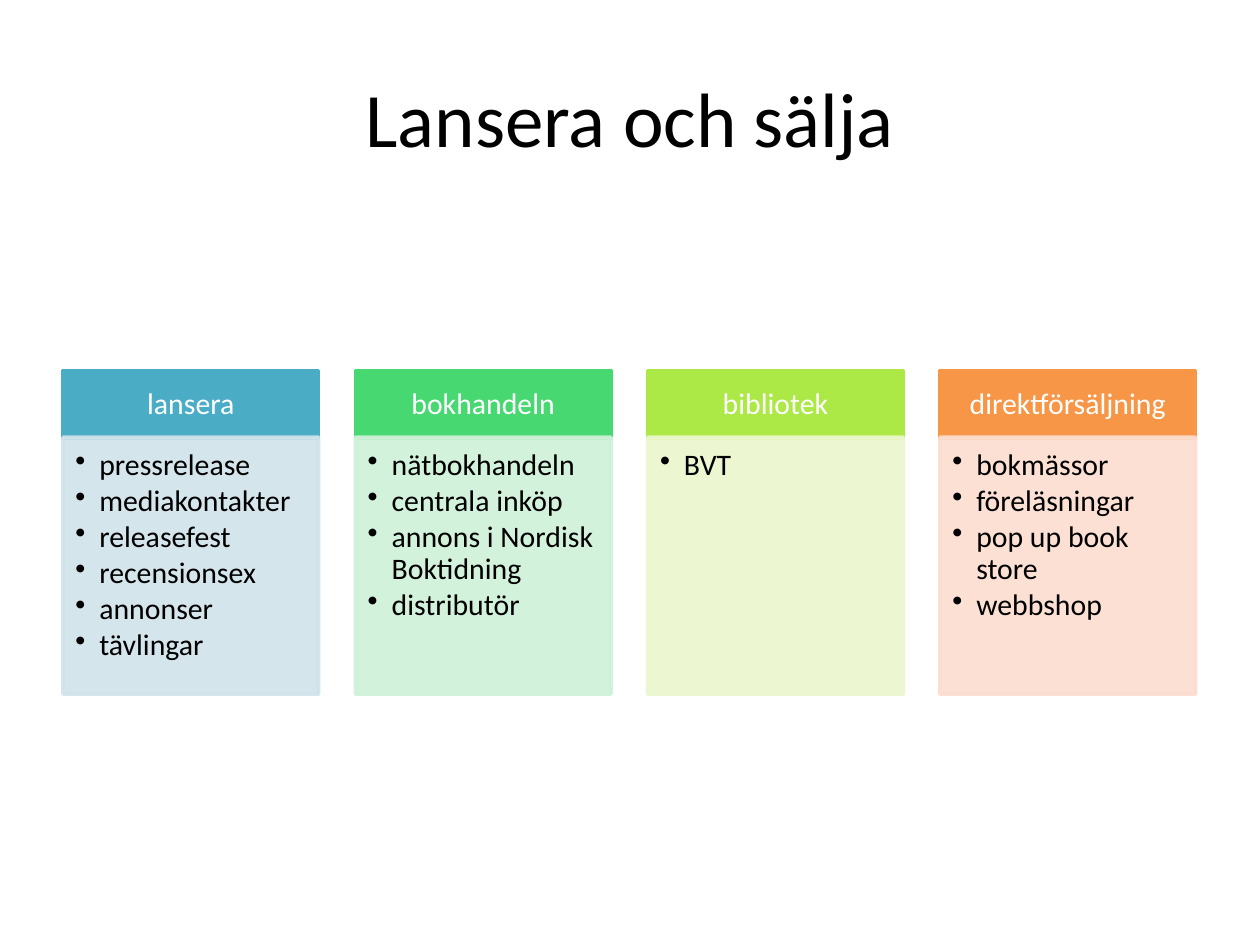
from dataclasses import dataclass

from pptx import Presentation
from pptx import util as u
from pptx.dml.color import RGBColor
from pptx.enum import shapes, text
from pptx.oxml.ns import qn
from lxml import etree


@dataclass(frozen=True)
class Theme:
    font: str = "Calibri"
    ink: str = "000000"
    paper: str = "FFFFFF"
    title_size: float = 44
    body_size: float = 17
    line_width: float = 2
    body_alpha: int = 90


# Heading, heading colour, body colour, bullets
COLUMNS = [
    ("lansera", "4BACC6", "D0E3EA",
     ["pressrelease", "mediakontakter", "releasefest", "recensionsex",
      "annonser", "tävlingar"]),
    ("bokhandeln", "47D872", "CFF1D9",
     ["nätbokhandeln", "centrala inköp", "annons i Nordisk Boktidning",
      "distributör"]),
    ("bibliotek", "ACE946", "EBF7CE", ["BVT"]),
    ("direktförsäljning", "F79646", "FCDDCF",
     ["bokmässor", "föreläsningar", "pop up book store", "webbshop"]),
]

LEFT, PITCH, WIDTH = 0.5, 2.32, 2.03
HEAD_TOP, HEAD_HEIGHT = 2.94, 0.54
BODY_TOP, BODY_HEIGHT = 3.47, 2.04


def add_bullet(p, indent):
    pPr = p._p.get_or_add_pPr()
    pPr.set("marL", str(u.Inches(indent)))
    pPr.set("indent", str(-u.Inches(indent)))
    etree.SubElement(pPr, qn("a:buChar")).set("char", "•")


def write(tf, lines, font, size, color, align=text.PP_ALIGN.LEFT,
          anchor=text.MSO_ANCHOR.MIDDLE, insets=None, spacing=None,
          after=None, bullet_indent=None):
    """Fill a text frame with one paragraph per line."""
    tf.word_wrap = True
    tf.vertical_anchor = anchor
    if insets:
        (tf.margin_left, tf.margin_top,
         tf.margin_right, tf.margin_bottom) = map(u.Inches, insets)
    for i, line in enumerate(lines):
        p = tf.add_paragraph() if i else tf.paragraphs[0]
        p.alignment = align
        if spacing:
            p.line_spacing = spacing
        if after is not None:
            p.space_after = u.Pt(after)
        if bullet_indent:
            p.level = 1
            add_bullet(p, bullet_indent)
        r = p.add_run()
        r.text = line
        r.font.name = font
        r.font.size = u.Pt(size)
        r.font.color.rgb = RGBColor.from_string(color)


class Deck:
    def __init__(self, theme):
        self.theme = theme
        self.prs = Presentation()
        self.prs.slide_width = u.Inches(10)
        self.prs.slide_height = u.Inches(7.5)
        self.s = None

    def add_slide(self):
        self.s = self.prs.slides.add_slide(self.prs.slide_layouts[5])

    def title(self, line):
        t, sp = self.theme, self.s.shapes.title
        sp.left, sp.top = u.Inches(0.5), u.Inches(0.3)
        sp.width, sp.height = u.Inches(9), u.Inches(1.25)
        write(sp.text_frame, [line], t.font, t.title_size, t.ink,
              align=text.PP_ALIGN.CENTER)

    def box(self, x, y, w, h, color, alpha=None):
        sp = self.s.shapes.add_shape(shapes.MSO_SHAPE.RECTANGLE,
                                     *map(u.Inches, (x, y, w, h)))
        sp.shadow.inherit = False
        sp.line.width = u.Pt(self.theme.line_width)
        for fill in (sp.fill, sp.line.fill):
            fill.solid()
            fill.fore_color.rgb = RGBColor.from_string(color)
        if alpha:
            # Transparency for both fill and outline
            for solid in sp._element.spPr.iter(qn("a:solidFill")):
                etree.SubElement(solid[0], qn("a:alpha")).set(
                    "val", str(alpha * 1000))
        return sp

    def heading(self, x, line, color):
        t = self.theme
        sp = self.box(x, HEAD_TOP, WIDTH, HEAD_HEIGHT, color)
        write(sp.text_frame, [line], t.font, t.body_size, t.paper,
              align=text.PP_ALIGN.CENTER, insets=(0.13, 0.08, 0.13, 0.08),
              spacing=0.9)

    def bullets(self, x, lines, color):
        t = self.theme
        sp = self.box(x, BODY_TOP, WIDTH, BODY_HEIGHT, color, t.body_alpha)
        write(sp.text_frame, lines, t.font, t.body_size, t.ink,
              anchor=text.MSO_ANCHOR.TOP, insets=(0.1, 0.1, 0.13, 0.15),
              spacing=0.9, after=2.2, bullet_indent=0.19)


def main():
    deck = Deck(Theme())
    deck.add_slide()
    deck.title("Lansera och sälja")

    # One heading and one bullet list per column
    for i, (name, head_color, body_color, items) in enumerate(COLUMNS):
        x = LEFT + i * PITCH
        deck.heading(x, name, head_color)
        deck.bullets(x, items, body_color)

    deck.prs.save("out.pptx")


if __name__ == "__main__":
    main()
